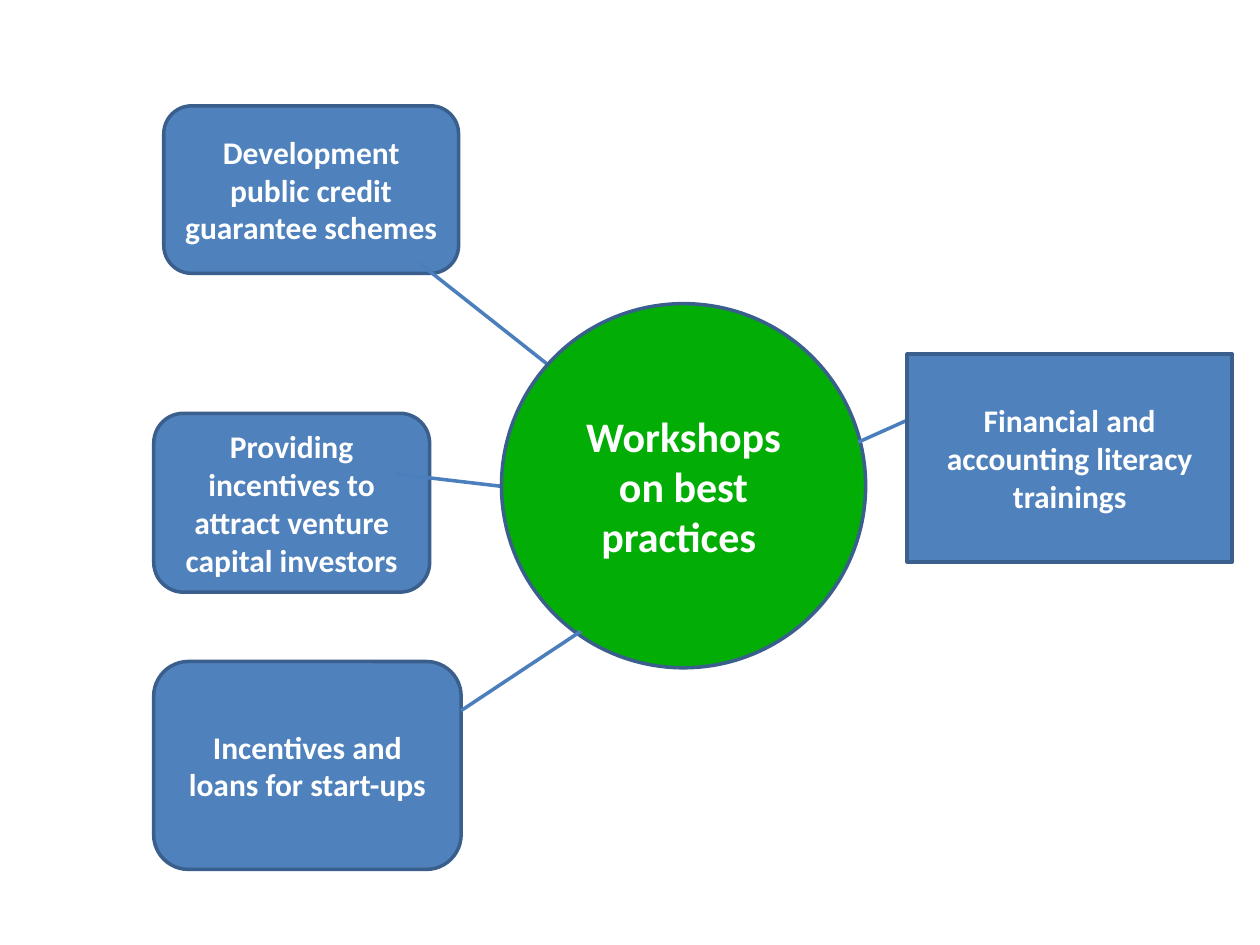
from dataclasses import dataclass

from lxml.etree import SubElement
from pptx import Presentation
from pptx.dml.color import RGBColor
from pptx.enum.shapes import MSO_CONNECTOR, MSO_SHAPE
from pptx.enum.text import MSO_ANCHOR, PP_ALIGN
from pptx.oxml.ns import qn
from pptx.slide import Slide
from pptx.util import Inches, Pt

BLUE, GREEN, WHITE = "4F81BD", "02AE06", "FFFFFF"
OUTLINE, LINK_BLUE = "3A5F8C", "4B7EBC"
LINE_WIDTH = Pt(2)


@dataclass
class Node:
    text: str
    left: float
    top: float
    width: float
    height: float
    kind: MSO_SHAPE = MSO_SHAPE.ROUNDED_RECTANGLE
    fill: str = BLUE
    size: int = 18


@dataclass
class Link:
    start: tuple[float, float]
    end: tuple[float, float]
    arrow: bool = False


# Listed from back to front
DIAGRAM = [
    Node("Development public credit guarantee schemes", 1.3, 0.84, 2.34, 1.33),
    Node("Providing incentives to attract venture capital investors",
         1.22, 3.28, 2.19, 1.42),
    Link((3.33, 2.09), (4.42, 2.95)),
    Link((3.13, 3.76), (3.98, 3.86)),
    Node("Workshops on best practices ", 3.98, 2.41, 2.89, 2.89,
         MSO_SHAPE.OVAL, GREEN, 24),
    Link((6.81, 3.51), (7.68, 3.12), arrow=True),
    Node("Incentives and loans for start-ups", 1.22, 5.25, 2.44, 1.65),
    Link((3.66, 5.64), (4.61, 5.01)),
    Node("Financial and accounting literacy trainings", 7.2, 2.81, 2.58, 1.65,
         MSO_SHAPE.RECTANGLE),
]


def rgb(color: str) -> RGBColor:
    return RGBColor.from_string(color)


def draw_node(slide: Slide, node: Node) -> None:
    shape = slide.shapes.add_shape(
        node.kind, Inches(node.left), Inches(node.top),
        Inches(node.width), Inches(node.height))
    shape.shadow.inherit = False
    shape.fill.solid()
    shape.fill.fore_color.rgb = rgb(node.fill)
    shape.line.color.rgb = rgb(OUTLINE)
    shape.line.width = LINE_WIDTH

    frame = shape.text_frame
    frame.word_wrap = True
    frame.vertical_anchor = MSO_ANCHOR.MIDDLE
    frame.text = node.text
    paragraph = frame.paragraphs[0]
    paragraph.alignment = PP_ALIGN.CENTER
    font = paragraph.font
    font.name = "Calibri"
    font.size = Pt(node.size)
    font.bold = True
    font.color.rgb = rgb(WHITE)


def draw_link(slide: Slide, link: Link) -> None:
    connector = slide.shapes.add_connector(
        MSO_CONNECTOR.STRAIGHT, *map(Inches, link.start + link.end))
    connector.line.color.rgb = rgb(LINK_BLUE)
    connector.line.width = LINE_WIDTH
    properties = connector._element.spPr
    if link.arrow:
        SubElement(properties.find(qn("a:ln")), qn("a:tailEnd"), type="arrow")
    SubElement(properties, qn("a:effectLst"))


def main() -> None:
    presentation = Presentation()
    presentation.slide_width = Inches(10)
    presentation.slide_height = Inches(7.5)
    slide = presentation.slides.add_slide(presentation.slide_layouts[6])
    for item in DIAGRAM:
        if isinstance(item, Node):
            draw_node(slide, item)
        else:
            draw_link(slide, item)
    presentation.save("out.pptx")


if __name__ == "__main__":
    main()
